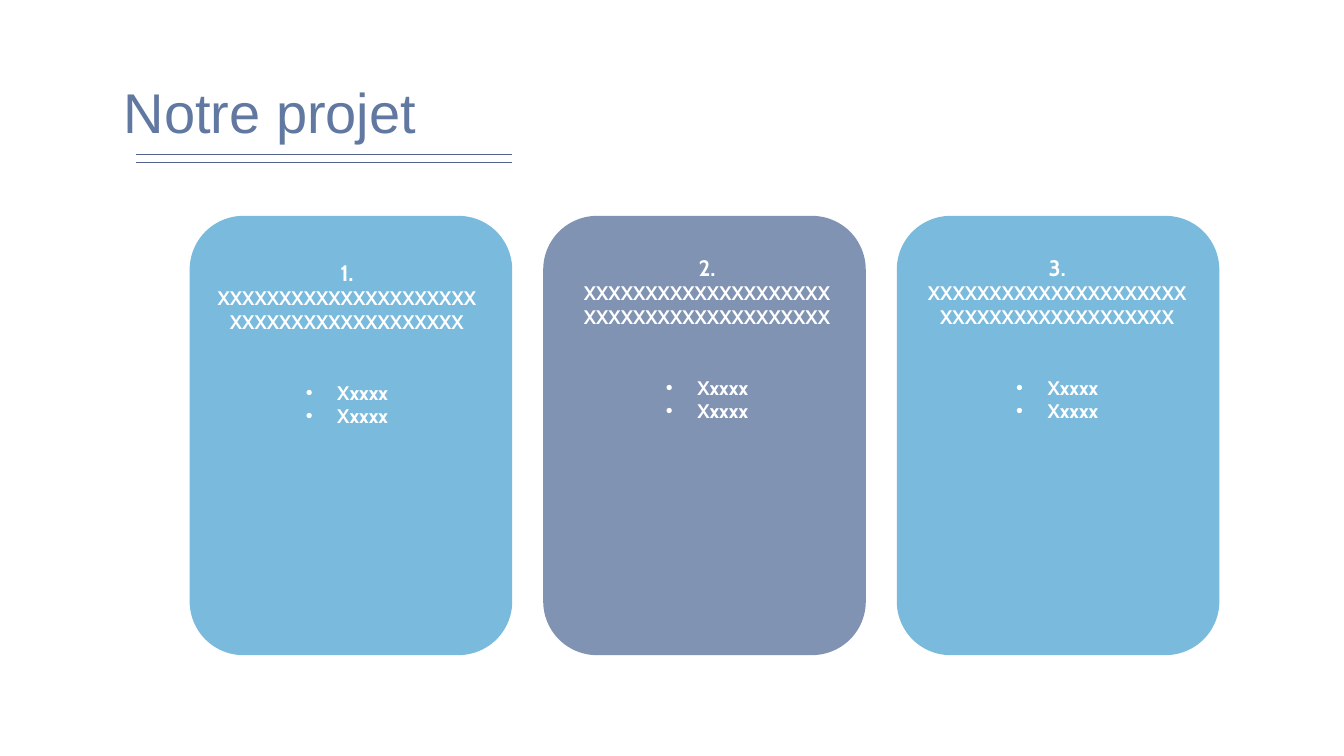
import pptx
import pptx.dml.color
import pptx.enum.shapes
import pptx.enum.text
import pptx.oxml.ns
import pptx.util
from lxml import etree
from pptx.util import Cm

RGBColor = pptx.dml.color.RGBColor
WHITE = RGBColor(0xFF, 0xFF, 0xFF)
SKY = RGBColor(0x79, 0xBA, 0xDD)
SLATE = RGBColor(0x61, 0x78, 0xA1)
NAVY = RGBColor(0x53, 0x61, 0x8E)

CARD_WIDTH, CARD_HEIGHT, CARD_PITCH = 8.13, 11.07, 8.91
CARD_TEXT = "XXXXXXXXXXXXXXXXXXXXXXXXXXXXXXXXXXXXXXXX"
CARD_ITEMS = ["Xxxxx", "Xxxxx"]
CARDS = [
    ("1.", SKY, None, (0.64, 1.09, 6.65)),
    ("2.", SLATE, 80, (0.89, 0.97, 6.48)),
    ("3.", SKY, None, (0.64, 0.97, 6.81)),
]


def add_child(parent, tag, **attributes):
    return etree.SubElement(parent, pptx.oxml.ns.qn(tag), **attributes)


def add_text_box(shapes, left, top, width, height, inset=None):
    box = shapes.add_textbox(Cm(left), Cm(top), Cm(width), Cm(height))
    frame = box.text_frame
    frame.word_wrap = True
    if inset is not None:
        frame.margin_left = frame.margin_right = Cm(inset)
        frame.margin_top = frame.margin_bottom = Cm(inset)
    return frame


def write_text(frame, text, size, font, color, bold=False, align=None,
               bullet=False, space_before=None, line_spacing=None):
    para = frame.paragraphs[0]
    if para.runs:
        para = frame.add_paragraph()
    if bullet:
        properties = para._p.get_or_add_pPr()
        properties.set("marL", str(Cm(0.79)))
        properties.set("indent", str(-Cm(0.79)))
        add_child(properties, "a:buFont", typeface="Arial")
        add_child(properties, "a:buChar", char="•")
    para.alignment = align
    para.line_spacing = line_spacing
    if space_before is not None:
        para.space_before = pptx.util.Pt(space_before)
    span = para.add_run()
    span.text = text
    span.font.size = pptx.util.Pt(size)
    span.font.name = font
    span.font.bold = bold
    span.font.color.rgb = color


def add_heading(page, left, top):
    frame = add_text_box(page.shapes, left, top, 21.74, 2.24)
    write_text(frame, "Notre projet", 40, "Arial", SLATE, line_spacing=0.9)
    for offset in (1.86, 2.06):
        rule = page.shapes.add_connector(
            pptx.enum.shapes.MSO_CONNECTOR.STRAIGHT,
            Cm(left + 0.56), Cm(top + offset),
            Cm(left + 10.03), Cm(top + offset))
        rule.line.color.rgb = NAVY
        rule.line.width = pptx.util.Pt(1)
        add_child(rule._element.spPr, "a:effectLst")


def add_card(page, left, top, number, color, opacity, text_place):
    group = page.shapes.add_group_shape()
    card = group.shapes.add_shape(
        pptx.enum.shapes.MSO_SHAPE.ROUNDED_RECTANGLE,
        Cm(left), Cm(top), Cm(CARD_WIDTH), Cm(CARD_HEIGHT))
    card.shadow.inherit = False
    card.line.fill.background()
    card.fill.solid()
    card.fill.fore_color.rgb = color
    if opacity is not None:
        fill_color = card._element.spPr.find(".//" + pptx.oxml.ns.qn("a:srgbClr"))
        add_child(fill_color, "a:alpha", val=str(opacity * 1000))

    text_left, text_top, text_width = text_place
    frame = add_text_box(group.shapes, left + text_left, top + text_top,
                         text_width, 9.47, inset=0)
    style = dict(font="Cabin", color=WHITE, bold=True,
                 align=pptx.enum.text.PP_ALIGN.CENTER)
    write_text(frame, number, 16, **style)
    write_text(frame, CARD_TEXT, 14, **style)
    for index, item in enumerate(CARD_ITEMS):
        write_text(frame, item, 14, bullet=True,
                   space_before=0 if index else 34, **style)


def main():
    deck = pptx.Presentation()
    deck.slide_width = Cm(33.87)
    deck.slide_height = Cm(19.05)
    page = deck.slides.add_slide(deck.slide_layouts[6])
    add_heading(page, 2.87, 2.03)
    for index, card in enumerate(CARDS):
        add_card(page, 4.78 + index * CARD_PITCH, 5.44, *card)
    deck.save("out.pptx")


if __name__ == "__main__":
    main()
